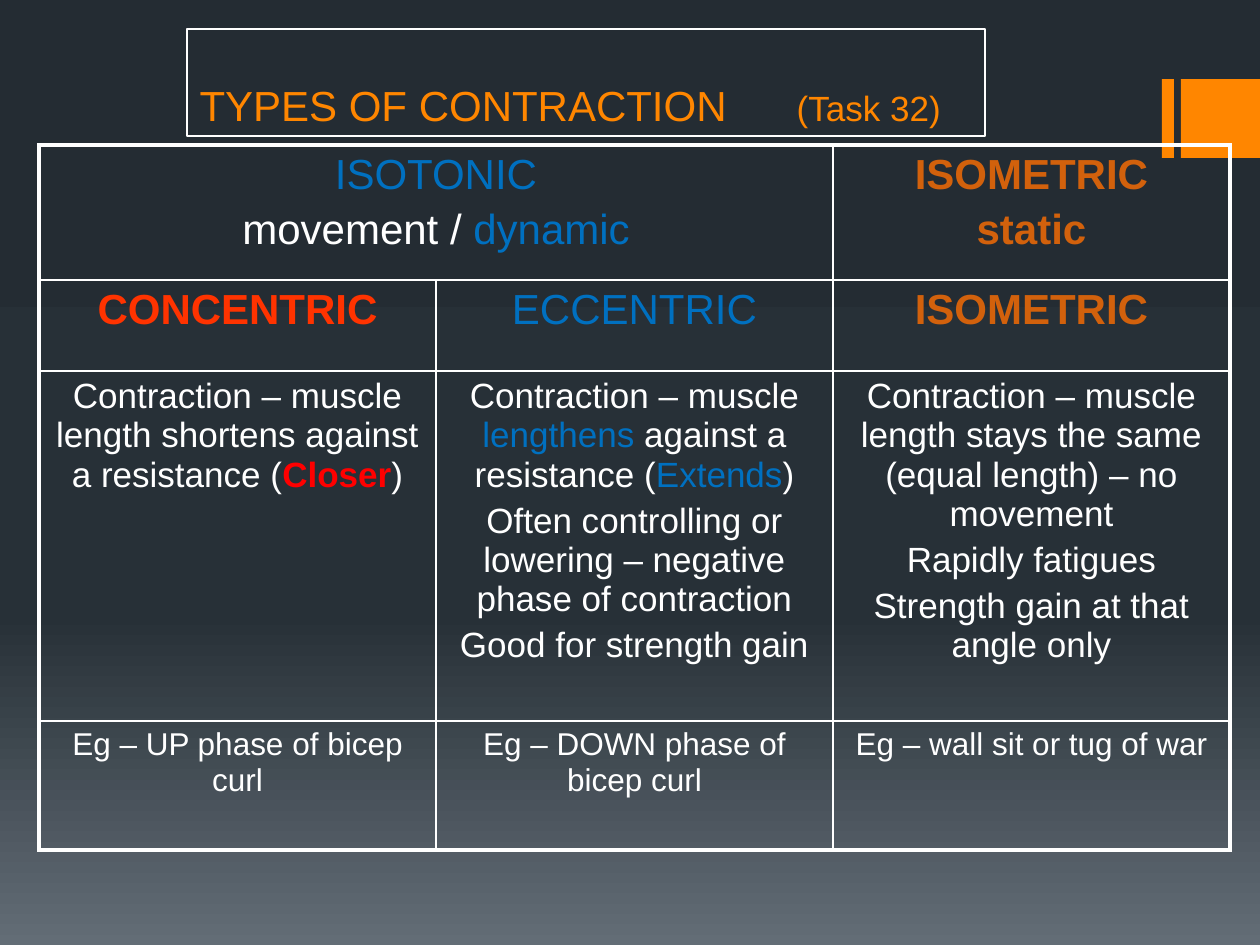
"""Build the slide that compares the types of muscle contraction."""
from copy import deepcopy

from lxml import etree
from pptx import Presentation
from pptx.dml.color import RGBColor
from pptx.enum.shapes import MSO_SHAPE
from pptx.enum.text import MSO_ANCHOR, MSO_AUTO_SIZE, PP_ALIGN
from pptx.oxml.ns import qn
from pptx.util import Emu, Pt

RECTANGLE = MSO_SHAPE.RECTANGLE
BOTTOM = MSO_ANCHOR.BOTTOM
NO_AUTOFIT = MSO_AUTO_SIZE.NONE
LEFT, CENTER = PP_ALIGN.LEFT, PP_ALIGN.CENTER

FONT = "Arial"
WHITE = RGBColor(0xFF, 0xFF, 0xFF)
ORANGE = RGBColor(0xFF, 0x86, 0x00)
RUST = RGBColor(0xD2, 0x61, 0x0C)
BLUE = RGBColor(0x00, 0x70, 0xC0)
SCARLET = RGBColor(0xFF, 0x33, 0x00)
RED = RGBColor(0xFF, 0x00, 0x00)
BACKDROP = [
    (0, RGBColor(0x24, 0x2C, 0x33)),
    (0.65, RGBColor(0x27, 0x30, 0x37)),
    (1, RGBColor(0x63, 0x6D, 0x76)),
]
EMU_PER_PX = 914400 / 126


def px(length):
    return Emu(round(length * EMU_PER_PX))


def add_run(paragraph, text, size, color=WHITE, bold=False):
    run = paragraph.add_run()
    run.text = text
    run.font.name = FONT
    run.font.size = Pt(size)
    run.font.bold = bold
    run.font.color.rgb = color


prs = Presentation()
prs.slide_width, prs.slide_height = px(1260), px(945)
slide = prs.slides.add_slide(prs.slide_layouts[5])

backdrop = slide.background.fill
backdrop.gradient()
backdrop.gradient_angle = 270
stop_list = slide._element.find(".//" + qn("a:gsLst"))
stop_list.append(deepcopy(stop_list[-1]))
for stop, (position, color) in zip(backdrop.gradient_stops, BACKDROP):
    stop.position = position
    stop.color.rgb = color

for left, width in [(1162, 12), (1181, 79)]:
    bar = slide.shapes.add_shape(RECTANGLE, px(left), px(79), px(width), px(79))
    bar.shadow.inherit = False
    bar.fill.solid()
    bar.fill.fore_color.rgb = ORANGE
    bar.line.fill.background()

title = slide.shapes.title
title.left, title.top, title.width, title.height = px(187), px(29), px(798), px(107)
title.line.color.rgb = WHITE
title.line.width = Pt(0.75)
title.text_frame.auto_size = NO_AUTOFIT
title.text_frame.vertical_anchor = BOTTOM
heading = title.text_frame.paragraphs[0]
heading.alignment = LEFT
tabs = etree.SubElement(heading._p.get_or_add_pPr(), qn("a:tabLst"))
etree.SubElement(tabs, qn("a:tab"), pos=str(px(597)), algn="l")
add_run(heading, "TYPES OF CONTRACTION\t", 24, ORANGE)
add_run(heading, "(Task 32)", 20, ORANGE)

ROWS = [
    (135, 24, [
        [[("ISOTONIC", BLUE)], [("movement / ",), ("dynamic", BLUE)]],
        [],
        [[("ISOMETRIC", RUST, True)], [("static", RUST, True)]],
    ]),
    (91, 24, [
        [[("CONCENTRIC", SCARLET, True)]],
        [[("ECCENTRIC", BLUE)]],
        [[("ISOMETRIC", RUST, True)]],
    ]),
    (350, 20, [
        [[("Contraction – muscle length shortens against a resistance (",),
          ("Closer", RED, True), (")",)]],
        [[("Contraction – muscle ",), ("lengthens", BLUE),
          (" against a resistance (",), ("Extends", BLUE), (")",)],
         [("Often controlling or lowering – negative phase of contraction",)],
         [("Good for strength gain",)]],
        [[("Contraction – muscle length stays the same (equal length) – no movement",)],
         [("Rapidly fatigues",)],
         [("Strength gain at that angle only",)]],
    ]),
    (129, 18, [
        [[("Eg – UP phase of bicep curl",)]],
        [[("Eg – DOWN phase of bicep curl",)]],
        [[("Eg – wall sit or tug of war",)]],
    ]),
]
COLUMNS, COLUMN_WIDTH = 3, 397
table_height = sum(height for height, _, _ in ROWS)
contractions = slide.shapes.add_table(
    len(ROWS), COLUMNS, px(39), px(145), px(COLUMNS * COLUMN_WIDTH), px(table_height)
).table
contractions.first_row = False
contractions.horz_banding = False
contractions.cell(0, 0).merge(contractions.cell(0, 1))
for column in contractions.columns:
    column.width = px(COLUMN_WIDTH)

for row, (height, size, entries) in enumerate(ROWS):
    contractions.rows[row].height = px(height)
    for col, entry in enumerate(entries):
        cell = contractions.cell(row, col)
        outer_edges = {
            "a:lnL": col == 0,
            "a:lnR": col == COLUMNS - 1,
            "a:lnT": row == 0,
            "a:lnB": row == len(ROWS) - 1,
        }
        for edge, is_outer in outer_edges.items():
            border = etree.SubElement(
                cell._tc.get_or_add_tcPr(), qn(edge), w=str(Pt(2.25 if is_outer else 1))
            )
            border_fill = etree.SubElement(border, qn("a:solidFill"))
            etree.SubElement(border_fill, qn("a:srgbClr"), val=str(WHITE))
        cell.fill.background()
        for index, pieces in enumerate(entry):
            frame = cell.text_frame
            paragraph = frame.add_paragraph() if index else frame.paragraphs[0]
            paragraph.alignment = CENTER
            if index:
                paragraph.space_before = Pt(size * 0.2)
            for text, *style in pieces:
                add_run(paragraph, text, size, *style)

prs.save("out.pptx")
